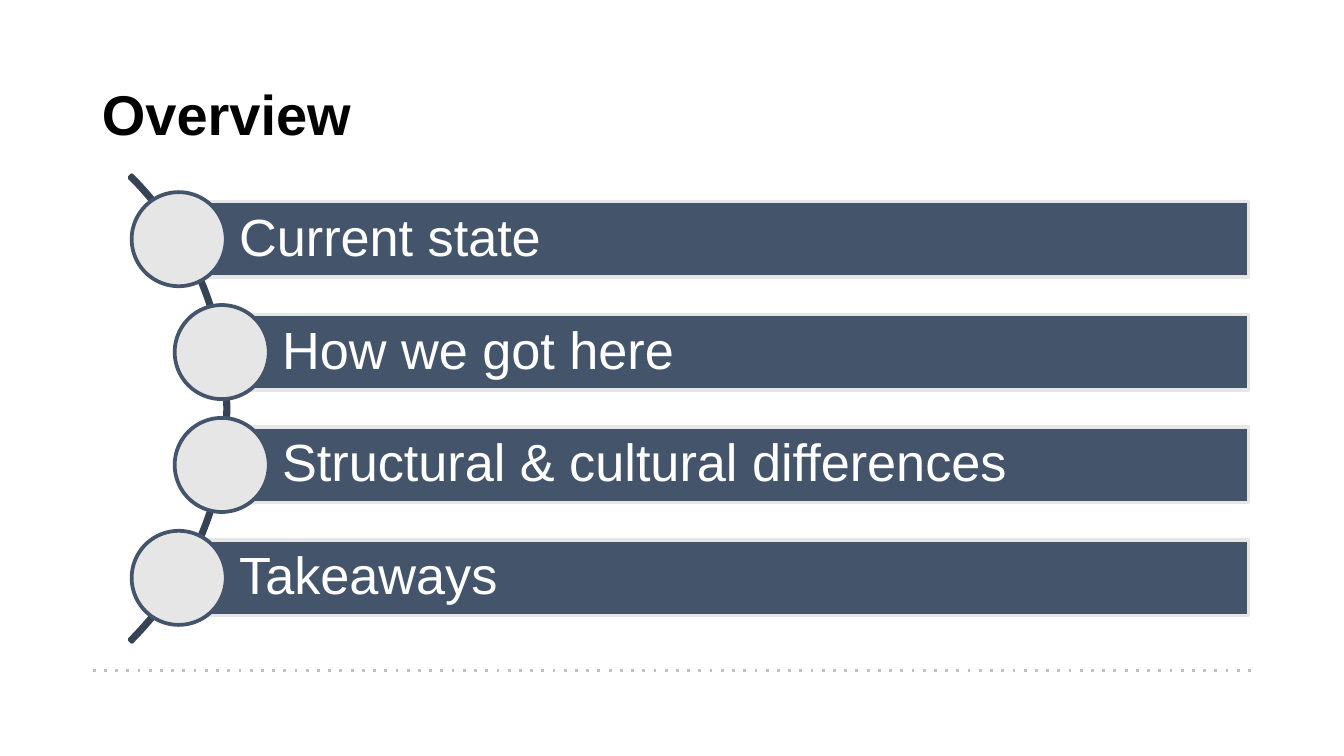
from lxml import etree
from pptx import Presentation, util as u
from pptx.dml.color import RGBColor
from pptx.enum import shapes, text
from pptx.oxml.ns import qn

SLATE = RGBColor(0x44, 0x54, 0x6A)
DARK_SLATE = RGBColor(0x36, 0x43, 0x55)
PALE = RGBColor(0xE7, 0xE6, 0xE6)
SILVER = RGBColor(0xC0, 0xC0, 0xC0)
WHITE = RGBColor(0xFF, 0xFF, 0xFF)
BLACK = RGBColor(0, 0, 0)

# Grid in inches: one row per agenda item, two possible columns
FIRST_ROW, ROW_STEP = 1.78, 0.84
COLUMNS = [1.33, 1.65]
BAR_RIGHT, BAR_HEIGHT, CIRCLE = 9.29, 0.56, 0.7
ARC = 4.91
AGENDA = [("Current state", 0), ("How we got here", 1),
          ("Structural & cultural differences", 1), ("Takeaways", 0)]

# Widescreen slide, 16:9
presentation = Presentation()
presentation.slide_width = u.Inches(10)
presentation.slide_height = u.Inches(10 * 9 / 16)
slide = presentation.slides.add_slide(presentation.slide_layouts[6])


def add_outlined(kind, left, top, width, height, fill, line):
    shape = slide.shapes.add_shape(kind, *map(u.Inches, (left, top, width, height)))
    shape.shadow.inherit = False
    if fill is None:
        shape.fill.background()
    else:
        shape.fill.solid()
        shape.fill.fore_color.rgb = fill
    shape.line.color.rgb = line
    shape.line.width = u.Pt(2)
    return shape


def write(frame, words, size, color, spacing, anchor):
    frame.text = words
    frame.word_wrap = True
    frame.vertical_anchor = anchor
    paragraph = frame.paragraphs[0]
    paragraph.alignment = text.PP_ALIGN.LEFT
    paragraph.line_spacing = spacing
    font = paragraph.runs[0].font
    font.name, font.size, font.color.rgb = "Arial", u.Pt(size), color
    return font


# Dotted footer rule
rule = slide.shapes.add_connector(shapes.MSO_CONNECTOR.STRAIGHT, u.Inches(0.69),
                                  u.Inches(4.99), u.Inches(9.32), u.Inches(4.99))
rule.line.color.rgb = SILVER
rule.line.width = u.Pt(1.5)
etree.SubElement(rule.line._get_or_add_ln(), qn("a:prstDash"), val="dot")
etree.SubElement(rule._element.spPr, qn("a:effectLst"))

# Title
title = slide.shapes.add_textbox(*map(u.Inches, (0.66, 0.64, 8.62, 0.58)))
write(title.text_frame, "Overview", 30, BLACK, 0.8, text.MSO_ANCHOR.TOP).bold = True

# Arc behind the circles, centred on the agenda rows
middle = FIRST_ROW + ROW_STEP * (len(AGENDA) - 1) / 2
arc = add_outlined(shapes.MSO_SHAPE.BLOCK_ARC, -3.21, middle - ARC / 2, ARC, ARC,
                   None, DARK_SLATE)
for index, value in enumerate((189, 27, 0.005)):
    arc.adjustments[index] = value

# Agenda bars, each with a circle centred on its left edge
for row, (label, column) in enumerate(AGENDA):
    center = FIRST_ROW + row * ROW_STEP
    left = COLUMNS[column]
    bar = add_outlined(shapes.MSO_SHAPE.RECTANGLE, left, center - BAR_HEIGHT / 2,
                       BAR_RIGHT - left, BAR_HEIGHT, SLATE, PALE)
    frame = bar.text_frame
    write(frame, label, 28, WHITE, 0.9, text.MSO_ANCHOR.MIDDLE)
    frame.margin_left = u.Inches(0.45)
    frame.margin_top = frame.margin_right = frame.margin_bottom = u.Inches(0.08)
    add_outlined(shapes.MSO_SHAPE.OVAL, left - CIRCLE / 2, center - CIRCLE / 2,
                 CIRCLE, CIRCLE, PALE, SLATE)

presentation.save("out.pptx")
